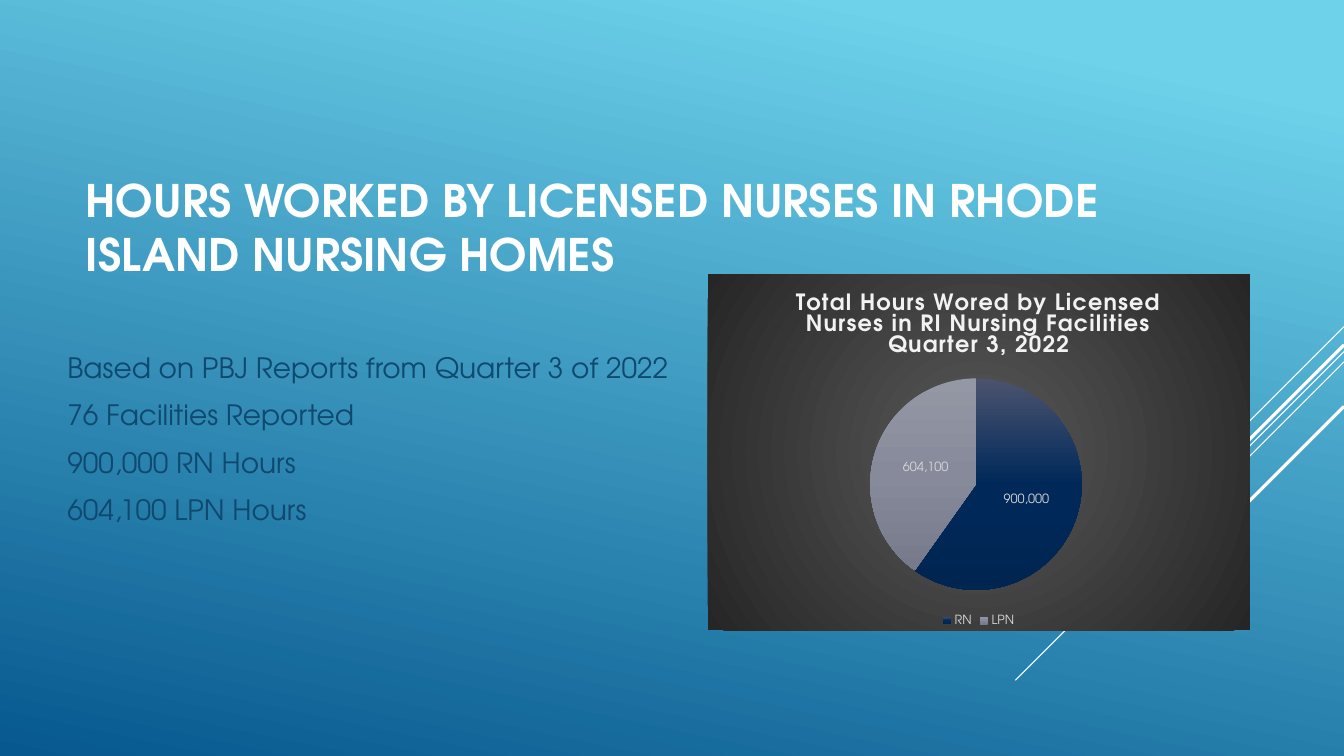
"""Build the slide on hours worked by licensed nurses in Rhode Island."""
from dataclasses import dataclass

from lxml.etree import SubElement
from pptx import Presentation
from pptx.chart.data import CategoryChartData
from pptx.dml.color import RGBColor
from pptx.enum.chart import XL_CHART_TYPE as ChartType
from pptx.enum.chart import XL_LABEL_POSITION as LabelPosition
from pptx.enum.chart import XL_LEGEND_POSITION as LegendPosition
from pptx.enum.shapes import MSO_CONNECTOR as Connector
from pptx.enum.text import MSO_ANCHOR as Anchor
from pptx.enum.text import MSO_AUTO_SIZE as AutoSize
from pptx.enum.text import PP_ALIGN as Align
from pptx.oxml.ns import qn
from pptx.util import Cm, Pt


@dataclass(frozen=True)
class Theme:
    font: str = "TeX Gyre Adventor"
    white: str = "FFFFFF"
    body: str = "0F496F"
    chart_title: str = "F2F2F2"
    chart_text: str = "D9D9D9"
    background: tuple = ((10, "6ED2EB"), (100, "06588E"))
    chart_fill: tuple = ((0, "595959"), (100, "262626"))
    slices: tuple = (
        ((0, "4B536E"), (50, "00295A"), (100, "002550")),
        ((0, "9498A5"), (50, "868A9B"), (100, "767A8B")),
    )
    title_size: int = 32
    body_size: int = 20
    chart_title_size: int = 16
    chart_size: int = 9


THEME = Theme()
SLIDE_WIDTH = 33.87
STREAKS = (
    (8.23, 2.54, 0.75),
    (8.86, 8.28, 0.75),
    (9.12, 5.26, 0.75),
    (8.69, 4.85, 2.25),
    (10.24, 3.53, 2.25),
)
FACTS = (
    "Based on PBJ Reports from Quarter 3 of 2022",
    "76 Facilities Reported",
    "900,000 RN Hours",
    "604,100 LPN Hours",
)
HOURS = {"RN": 900000, "LPN": 604100}
PLOT_AREA = {"x": 0.3, "y": 0.29, "w": 0.39, "h": 0.6}


def format_font(font, size, color, bold=False):
    font.name = THEME.font
    font.size = Pt(size)
    font.bold = bold
    font.color.rgb = RGBColor.from_string(color)


def write_text(paragraph, text, *, size, color, bold=False, align=Align.LEFT,
               before=0, after=0, tracking=0):
    paragraph.alignment = align
    paragraph.space_before = Pt(before)
    paragraph.space_after = Pt(after)
    run = paragraph.add_run()
    run.text = text
    format_font(run.font, size, color, bold)
    if tracking:
        run.font._element.set("spc", str(tracking))


def paint_gradient(properties, stops, angle=None):
    for solid in properties.findall(qn("a:solidFill")):
        properties.remove(solid)
    gradient = SubElement(properties, qn("a:gradFill"), rotWithShape="1")
    properties.insert(0, gradient)
    stop_list = SubElement(gradient, qn("a:gsLst"))
    for position, color in stops:
        stop = SubElement(stop_list, qn("a:gs"), pos=str(position * 1000))
        SubElement(stop, qn("a:srgbClr"), val=color)
    if angle is None:
        circle = SubElement(gradient, qn("a:path"), path="circle")
        sides = dict.fromkeys("ltrb", "50000")
        SubElement(circle, qn("a:fillToRect"), **sides)
    else:
        SubElement(gradient, qn("a:lin"), ang=str(angle * 60000), scaled="0")


def paint_background(slide):
    slide.background.fill.solid()
    properties = next(slide.element.iter(qn("p:bgPr")))
    paint_gradient(properties, THEME.background, angle=102)


def add_streak(slide, top, reach, weight):
    line = slide.shapes.add_connector(
        Connector.STRAIGHT, Cm(SLIDE_WIDTH), Cm(top),
        Cm(SLIDE_WIDTH - reach), Cm(top + reach))
    line.line.width = Pt(weight)
    line.line.color.rgb = RGBColor.from_string(THEME.white)
    SubElement(line.element.spPr, qn("a:effectLst"))


def prepare_frame(shape):
    frame = shape.text_frame
    frame.word_wrap = True
    frame.auto_size = AutoSize.NONE
    frame.vertical_anchor = Anchor.MIDDLE
    return frame


def place_title(slide, text):
    title = slide.shapes.title
    title.left, title.top = Cm(1.9), Cm(1.9)
    title.width, title.height = Cm(27.94), Cm(7.62)
    write_text(prepare_frame(title).paragraphs[0], text,
               size=THEME.title_size, color=THEME.white, bold=True)


def add_facts(slide, facts):
    box = slide.shapes.add_textbox(Cm(1.45), Cm(8.43), Cm(23.72), Cm(5.23))
    frame = prepare_frame(box)
    for index, fact in enumerate(facts):
        paragraph = frame.add_paragraph() if index else frame.paragraphs[0]
        write_text(paragraph, fact, size=THEME.body_size, color=THEME.body,
                   before=4 if index else 0, after=6)


def set_plot_layout(chart):
    plot_area = next(chart.element.iter(qn("c:plotArea")))
    for layout in plot_area.findall(qn("c:layout")):
        plot_area.remove(layout)
    layout = SubElement(plot_area, qn("c:layout"))
    plot_area.insert(0, layout)
    manual = SubElement(layout, qn("c:manualLayout"))
    SubElement(manual, qn("c:layoutTarget"), val="inner")
    for edge in "xy":
        SubElement(manual, qn(f"c:{edge}Mode"), val="edge")
    for name, share in PLOT_AREA.items():
        SubElement(manual, qn(f"c:{name}"), val=str(share))


def paint_chart(chart):
    text_properties = chart.element.find(qn("c:txPr"))
    properties = SubElement(chart.element, qn("c:spPr"))
    text_properties.addprevious(properties)
    paint_gradient(properties, THEME.chart_fill)
    line = SubElement(properties, qn("a:ln"))
    SubElement(line, qn("a:noFill"))
    series = chart.plots[0].series[0]
    for index, stops in enumerate(THEME.slices):
        series.points[index].format.fill.solid()
    slices = chart.element.iter(qn("c:dPt"))
    for data_point, stops in zip(slices, THEME.slices):
        paint_gradient(data_point.find(qn("c:spPr")), stops, angle=90)


def add_hours_chart(slide, title, hours):
    data = CategoryChartData(number_format="#,##0")
    data.categories = list(hours)
    data.add_series("Series 1", list(hours.values()))
    chart = slide.shapes.add_chart(
        ChartType.PIE, Cm(17.83), Cm(6.91), Cm(13.67), Cm(8.97), data).chart
    format_font(chart.font, THEME.chart_size, THEME.chart_text)
    chart.has_title = True
    write_text(chart.chart_title.text_frame.paragraphs[0], title,
               size=THEME.chart_title_size, color=THEME.chart_title,
               bold=True, align=Align.CENTER, tracking=100)
    chart.has_legend = True
    chart.legend.position = LegendPosition.BOTTOM
    chart.legend.include_in_layout = False
    format_font(chart.legend.font, THEME.chart_size, THEME.chart_text)
    plot = chart.plots[0]
    plot.vary_by_categories = True
    plot.has_data_labels = True
    labels = plot.data_labels
    labels.show_value = True
    labels.show_percentage = False
    labels.number_format = "#,##0"
    labels.number_format_is_linked = False
    labels.position = LabelPosition.CENTER
    format_font(labels.font, THEME.chart_size, THEME.chart_text)
    set_plot_layout(chart)
    paint_chart(chart)


def main():
    presentation = Presentation()
    presentation.slide_width = Cm(SLIDE_WIDTH)
    presentation.slide_height = Cm(19.05)
    slide = presentation.slides.add_slide(presentation.slide_layouts[5])
    paint_background(slide)
    for streak in STREAKS:
        add_streak(slide, *streak)
    place_title(slide, "HOURS WORKED BY LICENSED NURSES IN RHODE ISLAND NURSING HOMES")
    add_facts(slide, FACTS)
    add_hours_chart(slide, "Total Hours Wored by Licensed Nurses in RI "
                    "Nursing Facilities Quarter 3, 2022", HOURS)
    presentation.save("out.pptx")


if __name__ == "__main__":
    main()
